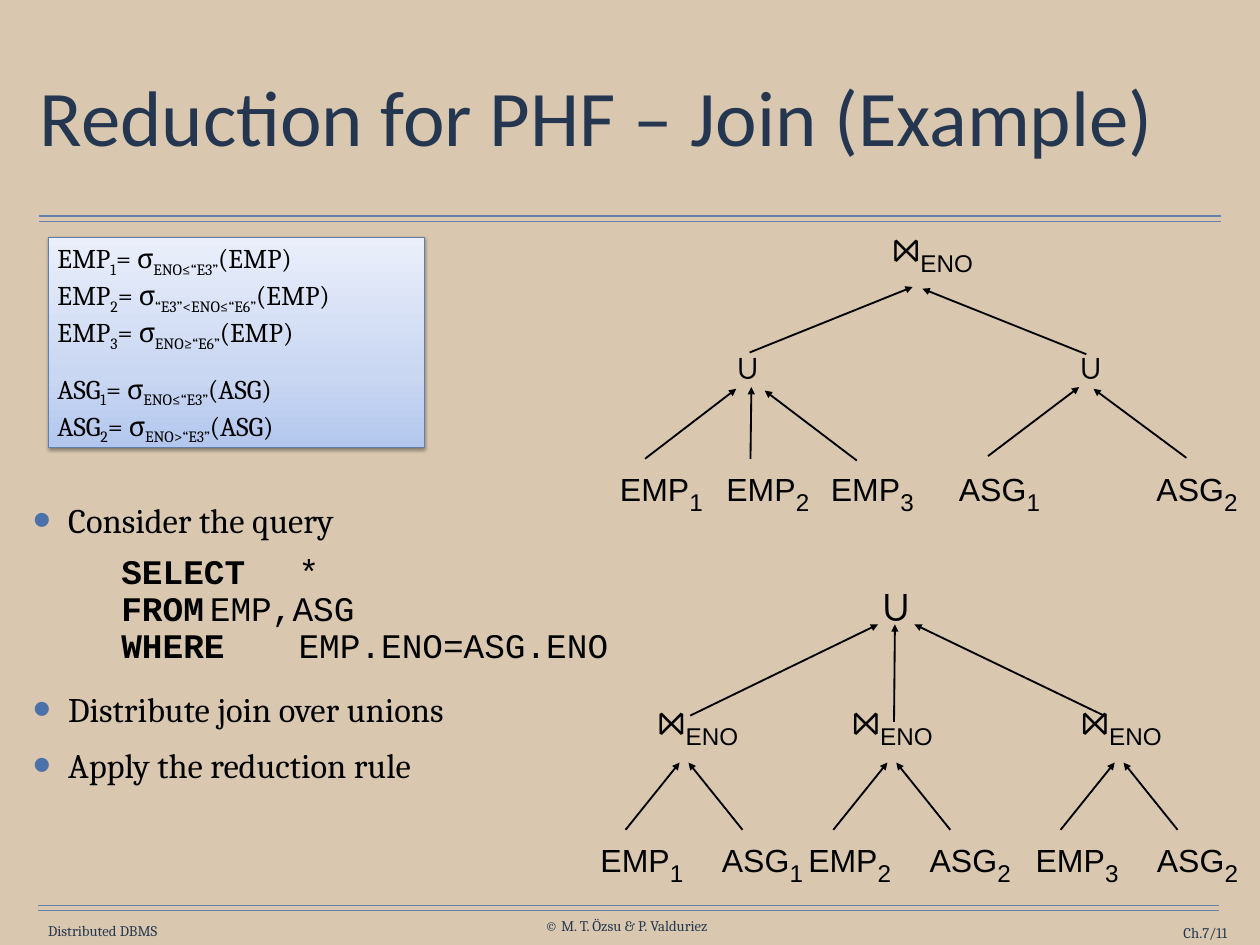
from lxml.etree import SubElement as Sub
from pptx import Presentation
from pptx.dml.color import RGBColor as RGB
from pptx.enum.shapes import MSO_CONNECTOR as Conn, MSO_SHAPE as Geo
from pptx.enum.text import MSO_ANCHOR as Anchor, PP_ALIGN as Align
from pptx.oxml import parse_xml
from pptx.oxml.ns import nsdecls, qn
from pptx.util import Inches, Pt

COLORS = {
    "paper": "D9C8AF", "ink": "000000", "title": "253750", "foot": "263750",
    "rule": "6682AA", "edge": "627FA8", "bullet": "4A71A9",
    "low": "B3C7EE", "mid": "CAD7F2", "high": "EAEFFB",
}
CELL = Inches(0.1)
COLS, ROWS = 142.2, 106.7

deck = Presentation()
deck.slide_width, deck.slide_height = int(COLS * CELL), int(ROWS * CELL)
slide = deck.slides.add_slide(deck.slide_layouts[6])
slide.background.fill.solid()
slide.background.fill.fore_color.rgb = RGB.from_string(COLORS["paper"])


def frame(area, inset=0, wrap=False, anchor=Anchor.TOP, align=Align.CENTER):
    text = slide.shapes.add_textbox(*[int(n * CELL) for n in area]).text_frame
    text.margin_left = text.margin_right = int(inset * CELL)
    text.margin_top = text.margin_bottom = int(inset * CELL)
    text.word_wrap = wrap
    text.vertical_anchor = anchor
    text.paragraphs[0].alignment = align
    return text


def write(para, marked, size, font, color="ink", low=None, bold=False):
    for i, part in enumerate(marked.split("|")):
        for j, piece in enumerate(part.split("\n")):
            if j:
                para.add_line_break()
            if not piece:
                continue
            run = para.add_run()
            run.text = piece
            run.font.name = font
            run.font.size = Pt(low if low and i % 2 else size)
            run.font.color.rgb = RGB.from_string(COLORS[color])
            if i % 2 and bold:
                run.font.bold = True
            elif i % 2:
                run.font._element.set("baseline", "-25000")


rules = [(4.4, 24.4, 137.8), (4.4, 25, 137.8), (4.3, 102.2, 137.6), (4.3, 102.8, 137.6)]
lines = [(left, y, right, y, "rule", 1) for left, y, right in rules]

arrows = [
    (84.7, 51.8, 84.8, 43.7), (72.8, 51.8, 83.1, 43.9), (96.7, 52, 86.3, 44.1),
    (111.5, 51.5, 121.8, 43.7), (133.9, 51.7, 123.4, 43.9),
    (84.6, 39.8, 103, 32.4), (122.6, 40, 104.1, 32.6),
    (77.9, 80.8, 99.1, 70.5), (100.9, 81.5, 101, 70.5), (124.6, 80.8, 103.2, 70.5),
]
leaves = [("EMP|1", 74.65, 51.9), ("EMP|2", 86.65, 51.9), ("EMP|3", 98.45, 51.9),
          ("ASG|1", 112.8, 51.9), ("ASG|2", 135.1, 51.9)]
joins = [(105.25, 27)]
for mid, shift, emp, asg in [(77.2, 1.55, 1, 1), (100.65, 0.05, 2, 2), (126.3, 0.25, 3, 2)]:
    arrows += [(mid + side * 6.6, 93.7, mid + side * 0.5, 86.1) for side in (-1, 1)]
    leaves += [(f"EMP|{emp}", mid - 4.75, 93.8), (f"ASG|{asg}", mid + 8.85, 93.8)]
    joins.append((mid + shift, 80.4))
lines += [(*ends, "ink", 1.5) for ends in arrows]

for *ends, color, width in lines:
    link = slide.shapes.add_connector(Conn.STRAIGHT, *[int(n * CELL) for n in ends])
    link.line.color.rgb = RGB.from_string(COLORS[color])
    link.line.width = Pt(width)
    if color == "ink":
        Sub(link.line._get_or_add_ln(), qn("a:tailEnd"), type="triangle")
    Sub(link._element.spPr, qn("a:effectLst"))

for area, words, align in [
    ((4.7, 104.1, 13.8, 2), "Distributed DBMS", Align.CENTER),
    ((60.3, 103.5, 20.8, 2), "© M. T. Özsu & P. Valduriez", Align.CENTER),
    ((123.1, 104.3, 15.4, 2), "Ch.7/11", Align.RIGHT),
]:
    foot = frame(area, wrap=align == Align.RIGHT, anchor=Anchor.MIDDLE, align=align)
    write(foot.paragraphs[0], words, 12, "Cambria", "foot")

title = frame((3.9, 4.9, 134.4, 17.6), 0.6, True, Anchor.MIDDLE, Align.LEFT).paragraphs[0]
title.line_spacing = 0.9
write(title, "Reduction for PHF – Join (Example)", 64, "Calibri", "title")

query = "\t|SELECT\t|*\n\t|FROM\t|EMP,ASG\n\t|WHERE\t|EMP.ENO=ASG.ENO"
body = frame((3.1, 55.7, 68.1, 40.2), 0.6, True, align=Align.LEFT)
for i, words in enumerate(["Consider the query", query,
                           "Distribute join over unions", "Apply the reduction rule"]):
    para = body.add_paragraph() if i else body.paragraphs[0]
    props = para._p.get_or_add_pPr()
    if words == query:
        tabs = Sub(props, qn("a:tabLst"))
        for stop in (10, 20, 30):
            Sub(tabs, qn("a:tab"), pos=str(stop * CELL), algn="l")
        para.line_spacing = 0.9
        para.space_after = Pt(5.7)
    else:
        props.set("marL", str(4 * CELL))
        props.set("indent", str(-4 * CELL))
        Sub(Sub(props, qn("a:buClr")), qn("a:srgbClr"), val=COLORS["bullet"])
        Sub(props, qn("a:buSzPct"), val="150000")
        Sub(props, qn("a:buFont"), typeface="Arial")
        Sub(props, qn("a:buChar"), char="•")
    if i:
        para.space_before = Pt(12)
    write(para, words, 28, "Courier New" if words == query else "Cambria", bold=words == query)

for mid, top, size, pitch in [(84.4, 38.9, 28, 34.1), (123.1, 38.9, 28, 34.1),
                              (100.85, 65.4, 36, 41.2)]:
    para = frame((mid - 1.5, top, 3, 5)).paragraphs[0]
    para.line_spacing = Pt(pitch)
    write(para, "∪", size, "Arial")

for words, mid, top in leaves:
    write(frame((mid - 4.85, top, 9.7, 4.4)).paragraphs[0], words, 26, "Arial", low=34)

for mid, top in joins:
    para = frame((mid - 6.15, top, 12.3, 4.7)).paragraphs[0]
    para.line_spacing = Pt(31.3)
    write(para, "⋈", 36, "Cambria")
    write(para, "|ENO", 34, "Arial")

card = slide.shapes.add_shape(Geo.RECTANGLE, *[int(n * CELL) for n in (5.5, 26.8, 42.4, 23.7)])
card.line.color.rgb = RGB.from_string(COLORS["edge"])
card.line.width = Pt(0.75)
stops = "".join(f'<a:gs pos="{at}000"><a:srgbClr val="{COLORS[key]}"/></a:gs>'
                for at, key in [(0, "low"), (35, "mid"), (100, "high")])
props = card._element.spPr
props.insert(2, parse_xml(f'<a:gradFill {nsdecls("a")}><a:gsLst>{stops}</a:gsLst>'
                          '<a:lin ang="16200000" scaled="0"/></a:gradFill>'))
shade = Sub(Sub(props, qn("a:effectLst")), qn("a:outerShdw"), blurRad=str(Pt(3.1)),
            dist=str(Pt(1.6)), dir="5400000", rotWithShape="0")
Sub(Sub(shade, qn("a:srgbClr"), val=COLORS["ink"]), qn("a:alpha"), val="38000")
text = card.text_frame
text.vertical_anchor = Anchor.TOP
for i, words in enumerate([
    "EMP|1|= σ|ENO≤“E3”|(EMP)\nEMP|2|= σ|“E3”<ENO≤“E6”|(EMP)\nEMP|3|= σ|ENO≥“E6”|(EMP)",
    "ASG|1|= σ|ENO≤“E3”|(ASG)\nASG|2|= σ|ENO>“E3”|(ASG)",
]):
    para = text.add_paragraph() if i else text.paragraphs[0]
    para.alignment = Align.LEFT
    if i:
        para.space_before = Pt(16)
    write(para, words, 22, "Cambria")

deck.save("out.pptx")
